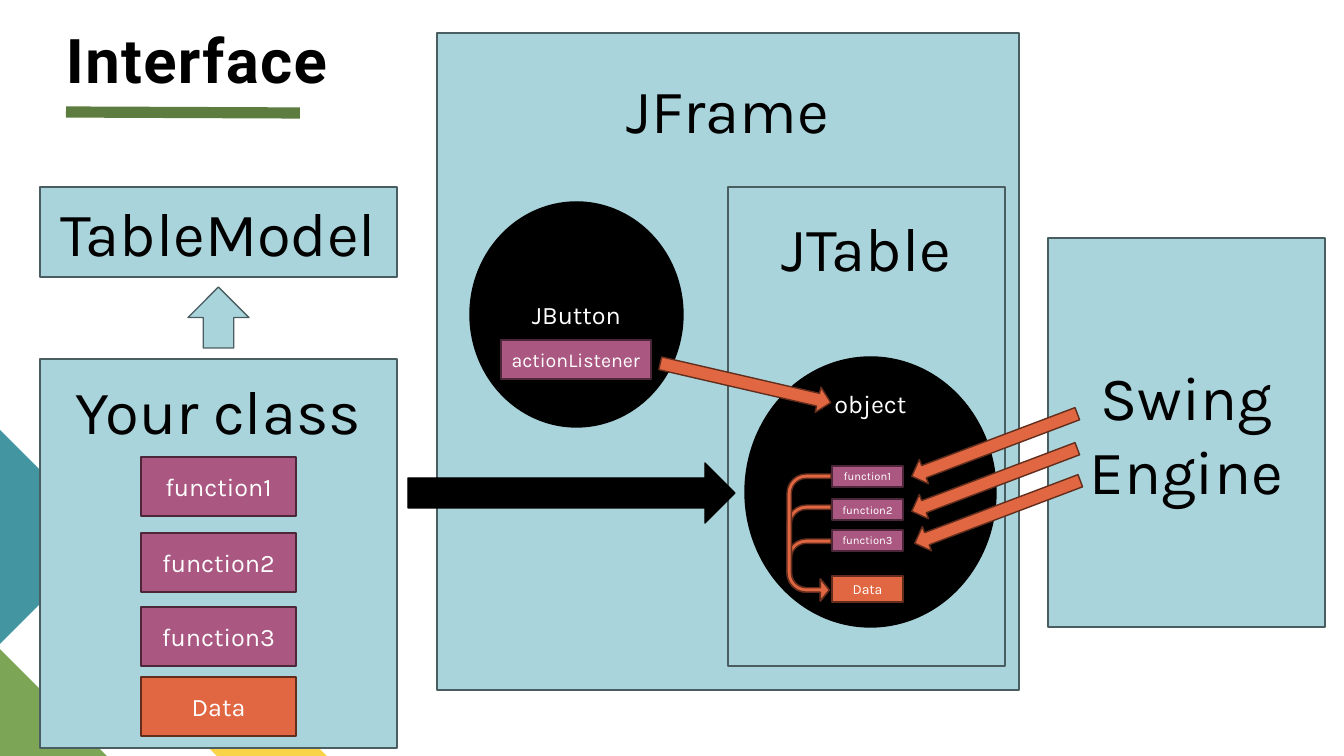
from lxml import etree
from pptx import Presentation
from pptx import util as u
from pptx.dml.color import RGBColor
from pptx.enum import shapes, text
from pptx.oxml.ns import qn

BLACK, WHITE = RGBColor(0, 0, 0), RGBColor(255, 255, 255)
SKY, SLATE = RGBColor(0xA9, 0xD4, 0xDB), RGBColor(0x4A, 0x5D, 0x60)
PLUM, DARK_PLUM = RGBColor(0xAA, 0x58, 0x81), RGBColor(0x4B, 0x27, 0x39)
ORANGE, RUST = RGBColor(0xE0, 0x67, 0x42), RGBColor(0x62, 0x2D, 0x1D)
MOSS, LEAF = RGBColor(0x5D, 0x7D, 0x40), RGBColor(0x7C, 0xA6, 0x55)
TEAL, YELLOW = RGBColor(0x44, 0x95, 0xA2), RGBColor(0xF9, 0xD4, 0x48)

# Fill and outline of each role
PANEL, METHOD, DATA, OBJECT = (SKY, SLATE), (PLUM, DARK_PLUM), (ORANGE, RUST), (BLACK, BLACK)
KIND = shapes.MSO_SHAPE
EMU_PER_PX = 914400 / 100.8


def px(length):
    return u.Emu(round(length * EMU_PER_PX))


class Diagram:
    """Holds the style and the current slide; lengths are in px."""

    def __init__(self, width, height):
        self.deck = Presentation()
        self.deck.slide_width, self.deck.slide_height = px(width), px(height)
        self.slide = self.deck.slides.add_slide(self.deck.slide_layouts[6])
        self.items = self.slide.shapes

    def paint(self, item, fill, line=None):
        item.shadow.inherit = False
        item.fill.solid()
        item.fill.fore_color.rgb = fill
        if line is None:
            item.line.fill.background()
        else:
            item.line.color.rgb = line
            item.line.width = u.Pt(1)

    def label(self, frame, words, color, align=text.PP_ALIGN.CENTER, **font):
        frame.word_wrap = True
        for number, line in enumerate(words.split("\n")):
            paragraph = frame.add_paragraph() if number else frame.paragraphs[0]
            paragraph.alignment = align
            run = paragraph.add_run()
            run.text = line
            run.font.color.rgb = color
            for key, value in font.items():
                setattr(run.font, key, value)

    def box(self, place, look, words="", size=18, color=WHITE, kind=KIND.RECTANGLE, top=None):
        """A labelled shape; top puts the label that far below the upper edge."""
        item = self.items.add_shape(kind, *map(px, place))
        self.paint(item, *look)
        if words:
            self.label(item.text_frame, words, color, name="Karla", size=u.Pt(size))
        if top is not None:
            item.text_frame.vertical_anchor = text.MSO_ANCHOR.TOP
            item.text_frame.margin_top = px(top)
        return item

    def panel(self, place, words, top=None):
        self.box(place, PANEL, words, 44, BLACK, top=top)

    def arrow(self, place, look, rotation=0):
        self.box(place, look, kind=KIND.RIGHT_ARROW).rotation = rotation

    def uturn(self, middle, bottom, length, depth):
        left, top = middle - length / 2, bottom - (length + depth) / 2
        item = self.box((left, top, length, depth), DATA, kind=KIND.U_TURN_ARROW)
        item.rotation = 90
        item._element.spPr.xfrm.set("flipV", "1")
        for number, value in enumerate((0.10, 0.25, 0.20, 0.44, 0.96)):
            item.adjustments[number] = value

    def corner(self, fill, start, *points):
        builder = self.items.build_freeform(*start, scale=EMU_PER_PX)
        builder.add_line_segments(points, close=True)
        self.paint(builder.convert_to_shape(), fill)

    def rule(self, start, end, color, width):
        item = self.items.add_connector(shapes.MSO_CONNECTOR.STRAIGHT, *map(px, start + end))
        item.line.color.rgb = color
        item.line.width = u.Pt(width)
        etree.SubElement(item._element.spPr, qn("a:effectLst"))

    def title(self, place, words):
        frame = self.items.add_textbox(*map(px, place)).text_frame
        layout = dict(margin_left=0, margin_right=0, margin_top=0, margin_bottom=0,
                      vertical_anchor=text.MSO_ANCHOR.BOTTOM)
        for key, value in layout.items():
            setattr(frame, key, value)
        self.label(frame, words, BLACK, text.PP_ALIGN.LEFT, name="Roboto", size=u.Pt(44), bold=True)
        heading = frame.paragraphs[0]
        heading.line_spacing = 0.8
        heading.runs[0]._r.get_or_add_rPr().set("spc", "100")


def main():
    d = Diagram(1344, 756)

    # Corner decoration and heading
    d.rule((66, 112), (300, 113), MOSS, 8)
    d.corner(YELLOW, (327, 756), (217, 756), (107, 646), (162, 592))
    d.corner(LEAF, (107, 756), (0, 756), (0, 649))
    d.corner(TEAL, (0, 430), (107, 537), (0, 644))
    d.title((66, 11, 308, 84), "Interface")

    # Panels
    d.panel((437, 33, 582, 657), "JFrame", top=39)
    d.panel((728, 187, 277, 479), "JTable", top=23)
    d.panel((1048, 238, 277, 389), "Swing\nEngine")
    d.panel((40, 187, 357, 90), "TableModel")
    d.panel((40, 359, 357, 389), "Your class", top=14)
    d.arrow((188, 287, 61, 61), PANEL, 270)

    # Members of the class
    for name, top in (("function1", 457), ("function2", 533), ("function3", 607)):
        d.box((141, top, 155, 59), METHOD, name)
    d.box((141, 677, 155, 59), DATA, "Data")

    # The object inside the table
    d.box((745, 357, 251, 270), OBJECT, "object", kind=KIND.OVAL, top=-8)
    d.arrow((408, 463, 327, 60), OBJECT)
    for name, top in (("function1", 466), ("function2", 499), ("function3", 530)):
        d.box((832, top, 71, 21), METHOD, name, 8)
    d.box((832, 576, 71, 26), DATA, "Data", 10)

    # Calls from the engine, and from each function to the data
    for left, top in ((906, 432), (906, 467), (909, 499)):
        d.arrow((left, top, 177, 26), DATA, 159.3)
    for length in (62, 96, 127):
        d.uturn(809, 601, length, 44)

    # Button and its listener
    d.box((470, 202, 213, 225), OBJECT, "JButton", kind=KIND.OVAL)
    d.arrow((658, 370, 175, 26), DATA, 13)
    d.box((501, 340, 150, 39), METHOD, "actionListener", 14)

    d.deck.save("out.pptx")


if __name__ == "__main__":
    main()
